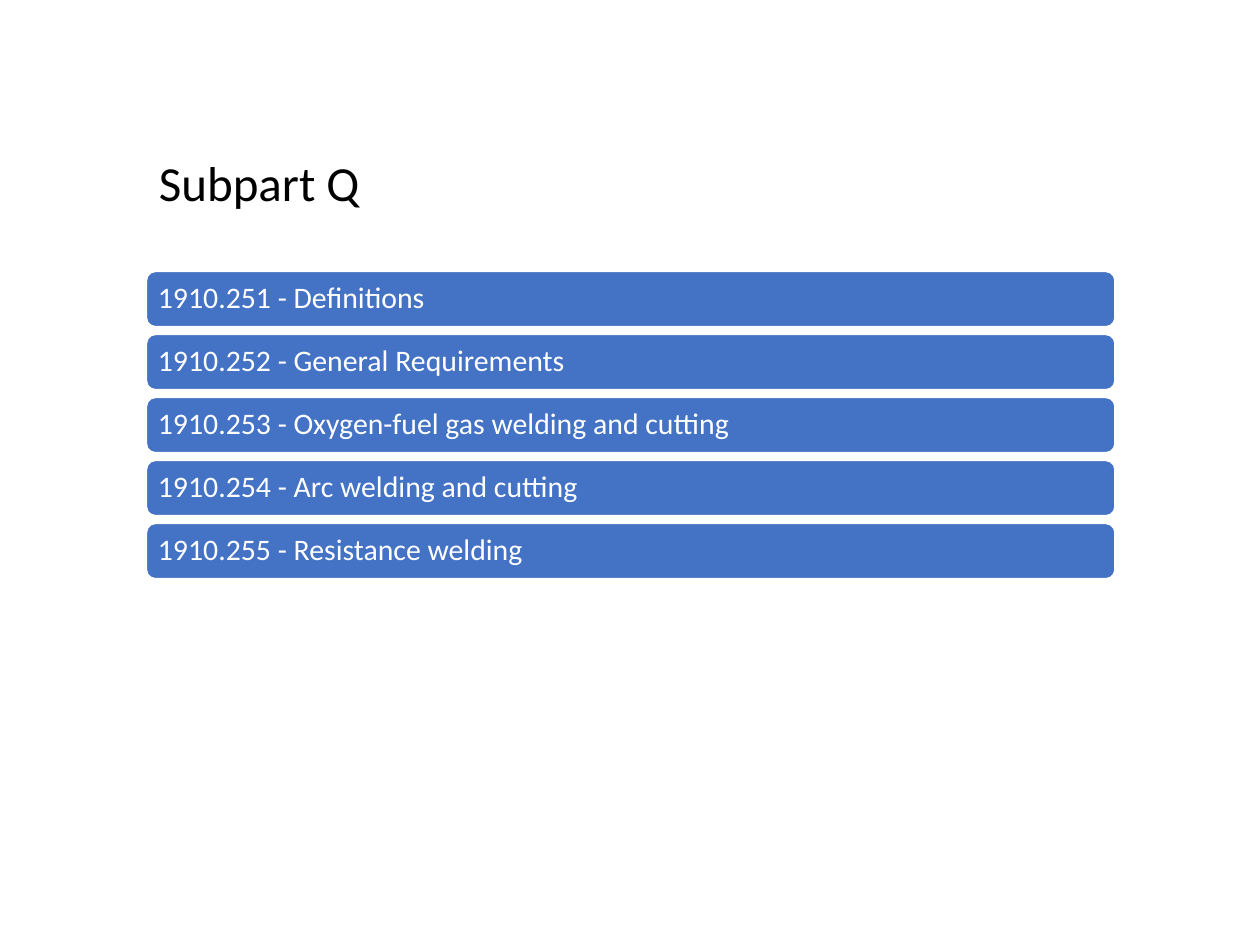
from pptx import Presentation
from pptx.dml.color import RGBColor
from pptx.enum.shapes import MSO_SHAPE
from pptx.enum.text import MSO_ANCHOR, MSO_AUTO_SIZE, PP_ALIGN
from pptx.util import Cm, Pt


def color(value):
    return RGBColor.from_string(value)


def format_paragraph(paragraph, size, font_color):
    paragraph.alignment = PP_ALIGN.LEFT
    paragraph.font.name = "Calibri"
    paragraph.font.size = Pt(size)
    paragraph.font.color.rgb = color(font_color)


presentation = Presentation()
presentation.slide_width = Cm(25.4)
presentation.slide_height = Cm(19.05)
slide = presentation.slides.add_slide(presentation.slide_layouts[5])

left = Cm(2.95)
title = slide.shapes.title
title.left, title.top, title.width, title.height = left, Cm(2.95), Cm(12.7), Cm(1.45)
title.text_frame.text = "Subpart Q"
title.text_frame.vertical_anchor = MSO_ANCHOR.TOP
title.text_frame.auto_size = MSO_AUTO_SIZE.SHAPE_TO_FIT_TEXT
format_paragraph(title.text_frame.paragraphs[0], 28, "000000")

sections = [
    "1910.251 - Definitions",
    "1910.252 - General Requirements",
    "1910.253 - Oxygen-fuel gas welding and cutting",
    "1910.254 - Arc welding and cutting",
    "1910.255 - Resistance welding",
]
for index, section in enumerate(sections):
    bar = slide.shapes.add_shape(
        MSO_SHAPE.ROUNDED_RECTANGLE, left, Cm(5.47 + 1.27 * index), Cm(19.53), Cm(1.12)
    )
    bar.shadow.inherit = False
    bar.fill.solid()
    bar.fill.fore_color.rgb = color("4472C4")
    bar.line.color.rgb = color("FFFFFF")
    bar.line.width = Pt(1)
    frame = bar.text_frame
    frame.margin_left = frame.margin_right = Cm(0.18)
    frame.margin_top = frame.margin_bottom = Cm(0.18)
    frame.vertical_anchor = MSO_ANCHOR.MIDDLE
    frame.word_wrap = True
    frame.text = section
    paragraph = frame.paragraphs[0]
    paragraph.line_spacing = 0.9
    paragraph.space_after = Pt(6)
    format_paragraph(paragraph, 17, "FFFFFF")

presentation.save("out.pptx")
